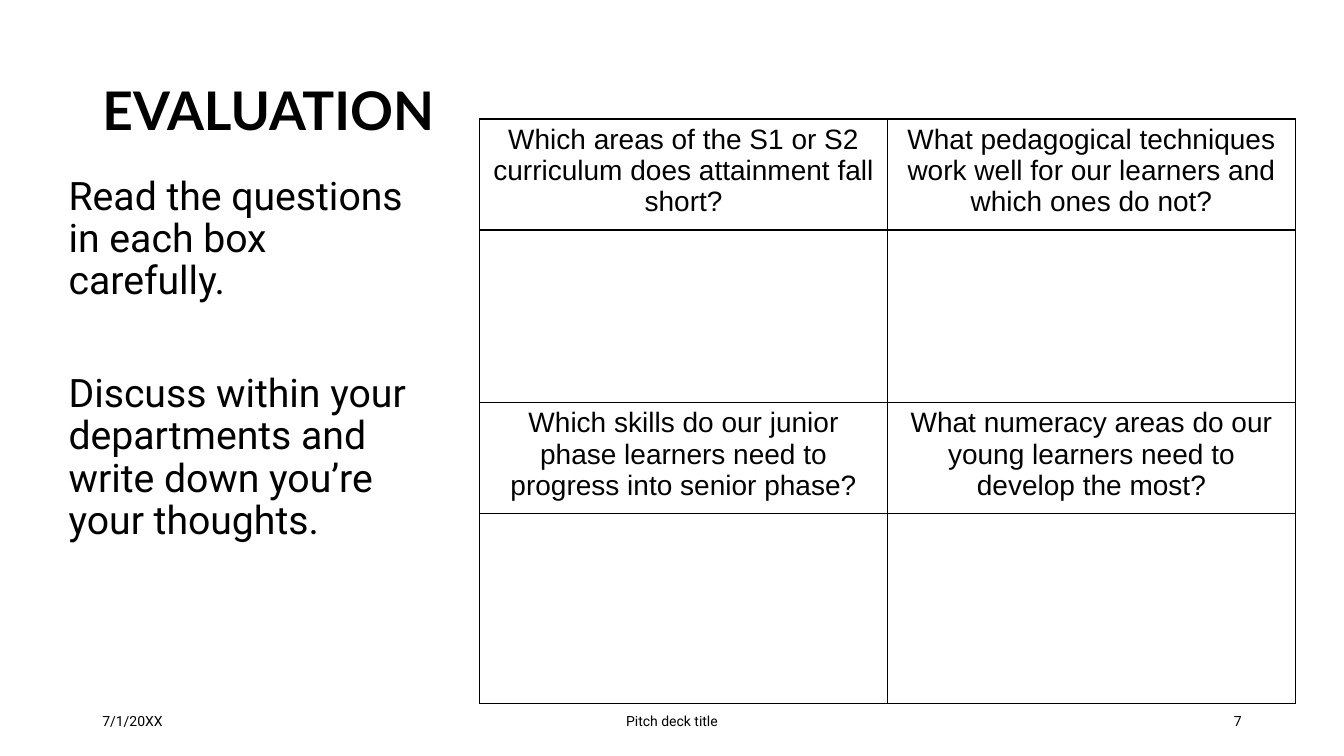
from lxml import etree
from pptx import Presentation
from pptx.dml.color import RGBColor
from pptx.enum.text import MSO_ANCHOR, MSO_AUTO_SIZE, PP_ALIGN
from pptx.oxml.ns import qn
from pptx.util import Pt

BLACK = RGBColor(0, 0, 0)
LEFT, CENTER, RIGHT = PP_ALIGN.LEFT, PP_ALIGN.CENTER, PP_ALIGN.RIGHT
MIDDLE = MSO_ANCHOR.MIDDLE
NO_AUTOFIT = MSO_AUTO_SIZE.NONE


def format_paragraph(paragraph, font_name, size, alignment, bold=False):
    paragraph.alignment = alignment
    for run in paragraph.runs:
        run.font.name = font_name
        run.font.size = Pt(size)
        run.font.bold = bold
        run.font.color.rgb = BLACK


def place(shape, left, top, width, height):
    shape.left, shape.top = Pt(left), Pt(top)
    shape.width, shape.height = Pt(width), Pt(height)


presentation = Presentation()
presentation.slide_width = Pt(960)
presentation.slide_height = Pt(540)
slide = presentation.slides.add_slide(presentation.slide_layouts[1])

# Title
title = slide.shapes.title
place(title, 66, 28.8, 828, 104.4)
title.text_frame.text = "EVALUATION"
title.text_frame.auto_size = NO_AUTOFIT
title.text_frame.vertical_anchor = MIDDLE
heading = title.text_frame.paragraphs[0]
heading.line_spacing = 0.9
format_paragraph(heading, "Lato", 38, LEFT, bold=True)

# Instructions
INSTRUCTIONS = [
    ("Read the questions in each box carefully.", 10),
    ("Discuss within your departments and write down you’re your thoughts.", 50),
]
body = slide.placeholders[1]
place(body, 41.8, 122.4, 264.2, 342.7)
body.text_frame.text = "\n".join(text for text, _ in INSTRUCTIONS)
body.text_frame.auto_size = NO_AUTOFIT
for paragraph, (_, space_before) in zip(body.text_frame.paragraphs, INSTRUCTIONS):
    paragraph.line_spacing = 0.9
    paragraph.space_before = Pt(space_before)
    format_paragraph(paragraph, "Roboto", 28, LEFT)
    properties = paragraph._p.get_or_add_pPr()
    properties.set("marL", "0")
    properties.set("indent", "0")
    etree.SubElement(properties, qn("a:buNone"))

# Footer
FOOTERS = [
    ("7/1/20XX", 66, 216, LEFT),
    ("Pitch deck title", 318, 324, CENTER),
    ("7", 678, 216, RIGHT),
]
for text, left, width, alignment in FOOTERS:
    footer = slide.shapes.add_textbox(Pt(left), Pt(500.5), Pt(width), Pt(28.8))
    footer.text_frame.word_wrap = True
    footer.text_frame.vertical_anchor = MIDDLE
    footer.text_frame.text = text
    format_paragraph(footer.text_frame.paragraphs[0], "Roboto", 10, alignment)

# Question grid: each question row is followed by an empty answer row
QUESTIONS = [
    ["Which areas of the S1 or S2 curriculum does attainment fall short?",
     "What pedagogical techniques work well for our learners and which ones do not?"],
    ["", ""],
    ["Which skills do our junior phase learners need to progress into senior phase?",
     "What numeracy areas do our young learners need to develop the most?"],
    ["", ""],
]
ROW_HEIGHTS = [73.6, 123.2, 73.6, 135.6]
COLUMN_WIDTH = 291.4
table = slide.shapes.add_table(
    len(QUESTIONS), 2, Pt(342.6), Pt(85), Pt(2 * COLUMN_WIDTH), Pt(sum(ROW_HEIGHTS))
).table
table.first_row = False
table.horz_banding = False
for column in table.columns:
    column.width = Pt(COLUMN_WIDTH)
for row, height, questions in zip(table.rows, ROW_HEIGHTS, QUESTIONS):
    row.height = Pt(height)
    for cell, question in zip(row.cells, questions):
        cell.text_frame.text = question
        format_paragraph(cell.text_frame.paragraphs[0], "Arial", 20, CENTER)
        cell_properties = cell._tc.get_or_add_tcPr()
        for side in ("lnL", "lnR", "lnT", "lnB"):
            border = etree.SubElement(cell_properties, qn(f"a:{side}"), w=str(Pt(1)))
            fill = etree.SubElement(border, qn("a:solidFill"))
            etree.SubElement(fill, qn("a:srgbClr"), val=str(BLACK))
        cell.fill.background()

presentation.save("out.pptx")
